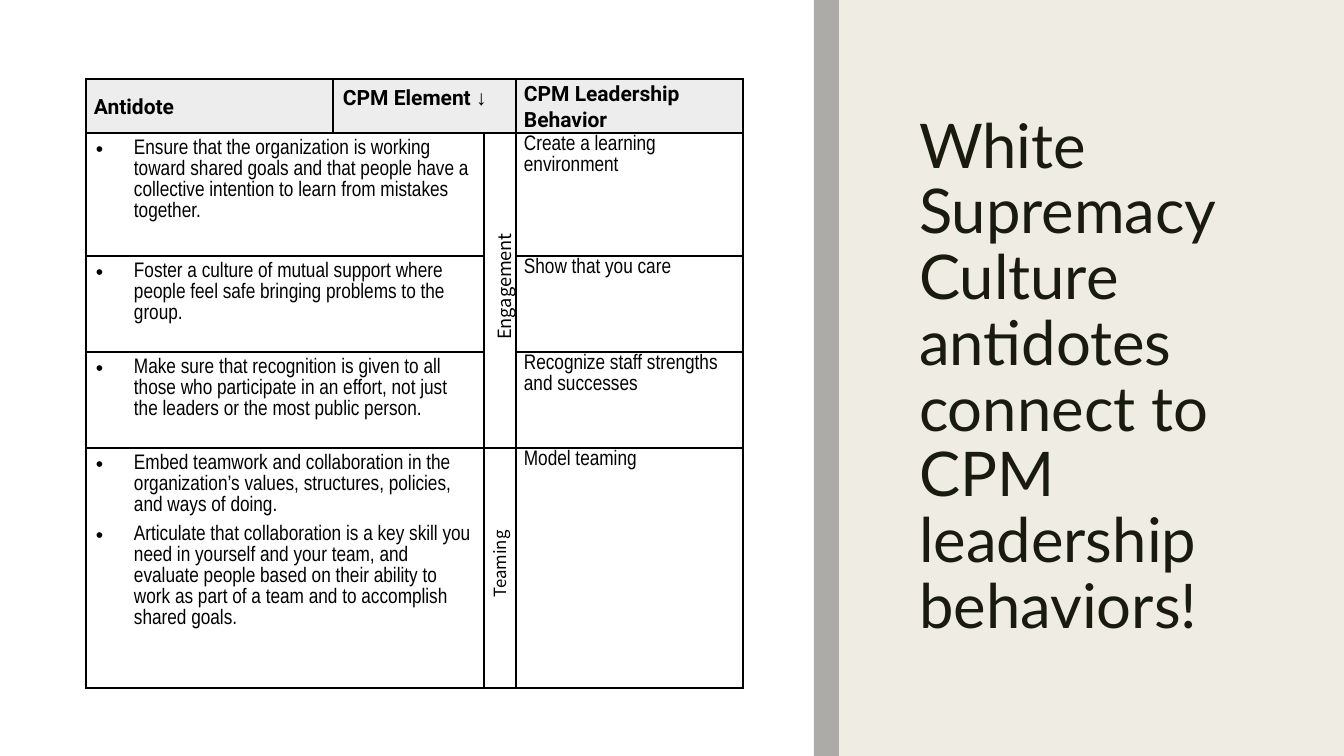
from lxml.etree import SubElement
from pptx import Presentation
from pptx.dml.color import RGBColor
from pptx.enum.shapes import MSO_SHAPE
from pptx.enum.text import MSO_ANCHOR, MSO_AUTO_SIZE, PP_ALIGN
from pptx.oxml import parse_xml
from pptx.oxml.ns import nsdecls, qn
from pptx.util import Emu, Pt

SLIDE_WIDTH, SLIDE_HEIGHT = 1344, 756
INK = RGBColor(0x19, 0x1B, 0x0E)
BLACK = RGBColor(0, 0, 0)
WHITE = RGBColor(0xFF, 0xFF, 0xFF)
CREAM = RGBColor(0xEF, 0xED, 0xE3)
GRAY = RGBColor(0x80, 0x80, 0x80)
HEADER_FILL = RGBColor(0xED, 0xED, 0xED)

COLUMN_WIDTHS = [247, 151, 32, 227]
ROW_HEIGHTS = [54, 123, 96, 96, 240]
WIDE_MARGINS = (10, 5, 10, 5)
TIGHT_MARGINS = (8, 1, 8, 0)
TITLE = "White Supremacy Culture antidotes connect to CPM leadership behaviors!"
ROWS = [
    (["Ensure that the organization is working toward shared goals and that people "
      "have a collective intention to learn from mistakes together."],
     "Create a learning environment"),
    (["Foster a culture of mutual support where people feel safe bringing problems "
      "to the group."],
     "Show that you care"),
    (["Make sure that recognition is given to all those who participate in an effort, "
      "not just the leaders or the most public person."],
     "Recognize staff strengths and successes"),
    (["Embed teamwork and collaboration in the organization’s values, structures, "
      "policies, and ways of doing.",
      "Articulate that collaboration is a key skill you need in yourself and your team, "
      "and evaluate people based on their ability to work as part of a team and to "
      "accomplish shared goals."],
     "Model teaming"),
]


def px(length):
    """Turn pixels into EMU."""
    return Emu(round(length * 914400 / 100.8))


def add_panel(slide, left, width, color, opacity=100):
    """Add a full-height rectangle without outline."""
    panel = slide.shapes.add_shape(
        MSO_SHAPE.RECTANGLE, px(left), 0, px(width), px(SLIDE_HEIGHT))
    panel.shadow.inherit = False
    panel.line.fill.background()
    panel.fill.solid()
    panel.fill.fore_color.rgb = color
    if opacity < 100:
        color_element = panel.element.spPr.find(".//" + qn("a:srgbClr"))
        SubElement(color_element, qn("a:alpha")).set("val", str(opacity * 1000))
    return panel


def format_title(title):
    """Place and fill the title placeholder."""
    title.left, title.top, title.width, title.height = map(px, (909, 71, 364, 615))
    frame = title.text_frame
    frame.text = TITLE
    frame.word_wrap = True
    frame.auto_size = MSO_AUTO_SIZE.NONE
    frame.vertical_anchor = MSO_ANCHOR.MIDDLE
    paragraph = frame.paragraphs[0]
    paragraph.alignment = PP_ALIGN.LEFT
    paragraph.line_spacing = 0.89
    set_font(paragraph, "Lato", 44, INK)


def set_font(paragraph, name, size, color=BLACK, bold=False):
    """Set the font of a whole paragraph."""
    font = paragraph.font
    font.name, font.size, font.bold = name, Pt(size), bold
    font.color.rgb = color


def set_indent(paragraph, left, first_line=0):
    """Set the left margin and first-line indent of a paragraph."""
    properties = paragraph._p.get_or_add_pPr()
    properties.set("marL", str(px(left)))
    properties.set("indent", str(px(first_line)))
    return properties


def style_cell(cell, fill=None):
    """Give a cell its fill and thin black borders."""
    if fill is None:
        cell.fill.background()
    else:
        cell.fill.solid()
        cell.fill.fore_color.rgb = fill
    properties = cell._tc.get_or_add_tcPr()
    for position, side in enumerate(("lnL", "lnR", "lnT", "lnB")):
        properties.insert(position, parse_xml(
            f'<a:{side} {nsdecls("a")} w="12700"><a:solidFill>'
            f'<a:srgbClr val="{BLACK}"/></a:solidFill></a:{side}>'))


def fill_cell(cell, texts, margins, anchor=MSO_ANCHOR.TOP):
    """Write paragraphs into a cell and return them."""
    (cell.margin_left, cell.margin_top,
     cell.margin_right, cell.margin_bottom) = map(px, margins)
    cell.vertical_anchor = anchor
    cell.text = "\n".join(texts)
    for paragraph in cell.text_frame.paragraphs:
        paragraph.line_spacing = 1.07
    return cell.text_frame.paragraphs


def fill_header(cell, text, margins, anchor):
    """Write a bold column heading."""
    paragraph = fill_cell(cell, [text], margins, anchor)[0]
    set_font(paragraph, "Roboto", 15, bold=True)
    return paragraph


def fill_bullets(cell, texts, space_after):
    """Write a bulleted list of antidotes."""
    for paragraph in fill_cell(cell, texts, WIDE_MARGINS):
        paragraph.space_after = Pt(space_after)
        properties = set_indent(paragraph, 38, -38)
        SubElement(properties, qn("a:buFont")).set("typeface", "Arial")
        SubElement(properties, qn("a:buChar")).set("char", "•")
        set_font(paragraph, "Arial Narrow", 15)


def fill_element(cell, text, size, margins):
    """Write a CPM element that reads upwards."""
    paragraph = fill_cell(cell, [text], margins, MSO_ANCHOR.MIDDLE)[0]
    cell._tc.get_or_add_tcPr().set("vert", "vert270")
    paragraph.alignment = PP_ALIGN.CENTER
    set_indent(paragraph, 8)
    set_font(paragraph, "Noto Sans CJK SC", size)


def add_antidote_table(slide):
    """Add the table of antidotes, elements and behaviors."""
    table = slide.shapes.add_table(
        len(ROW_HEIGHTS), len(COLUMN_WIDTHS), px(86), px(79),
        px(sum(COLUMN_WIDTHS)), px(sum(ROW_HEIGHTS))).table
    table.first_row = table.horz_banding = False
    for column, width in zip(table.columns, COLUMN_WIDTHS):
        column.width = px(width)
    for index, (row, height) in enumerate(zip(table.rows, ROW_HEIGHTS)):
        row.height = px(height)
        for cell in row.cells:
            style_cell(cell, HEADER_FILL if index == 0 else None)

    table.cell(0, 1).merge(table.cell(0, 2))
    table.cell(1, 2).merge(table.cell(3, 2))
    fill_header(table.cell(0, 0), "Antidote", TIGHT_MARGINS, MSO_ANCHOR.MIDDLE)
    element_heading = fill_header(
        table.cell(0, 1), "CPM Element ", WIDE_MARGINS, MSO_ANCHOR.TOP)
    arrow = element_heading.add_run()
    arrow.text = "↓"
    arrow.font.name = "Arial"
    fill_header(table.cell(0, 3), "CPM Leadership Behavior",
                TIGHT_MARGINS, MSO_ANCHOR.MIDDLE)

    for index, (antidotes, behavior) in enumerate(ROWS, start=1):
        table.cell(index, 0).merge(table.cell(index, 1))
        fill_bullets(table.cell(index, 0), antidotes, 0 if index == 1 else 6)
        paragraph = fill_cell(table.cell(index, 3), [behavior], TIGHT_MARGINS)[0]
        set_font(paragraph, "Arial Narrow", 15)
    fill_element(table.cell(1, 2), "Engagement", 13, WIDE_MARGINS)
    fill_element(table.cell(4, 2), "Teaming", 12, TIGHT_MARGINS)


def main():
    """Build and save the slide."""
    presentation = Presentation()
    presentation.slide_width, presentation.slide_height = px(SLIDE_WIDTH), px(SLIDE_HEIGHT)
    slide = presentation.slides.add_slide(presentation.slide_layouts[5])
    title = slide.shapes.title
    format_title(title)
    backdrop = add_panel(slide, 0, SLIDE_WIDTH, CREAM)
    title.element.addprevious(backdrop.element)
    add_panel(slide, 0, 814, WHITE)
    add_panel(slide, 814, 25, GRAY, opacity=60)
    add_antidote_table(slide)
    presentation.save("out.pptx")


if __name__ == "__main__":
    main()
